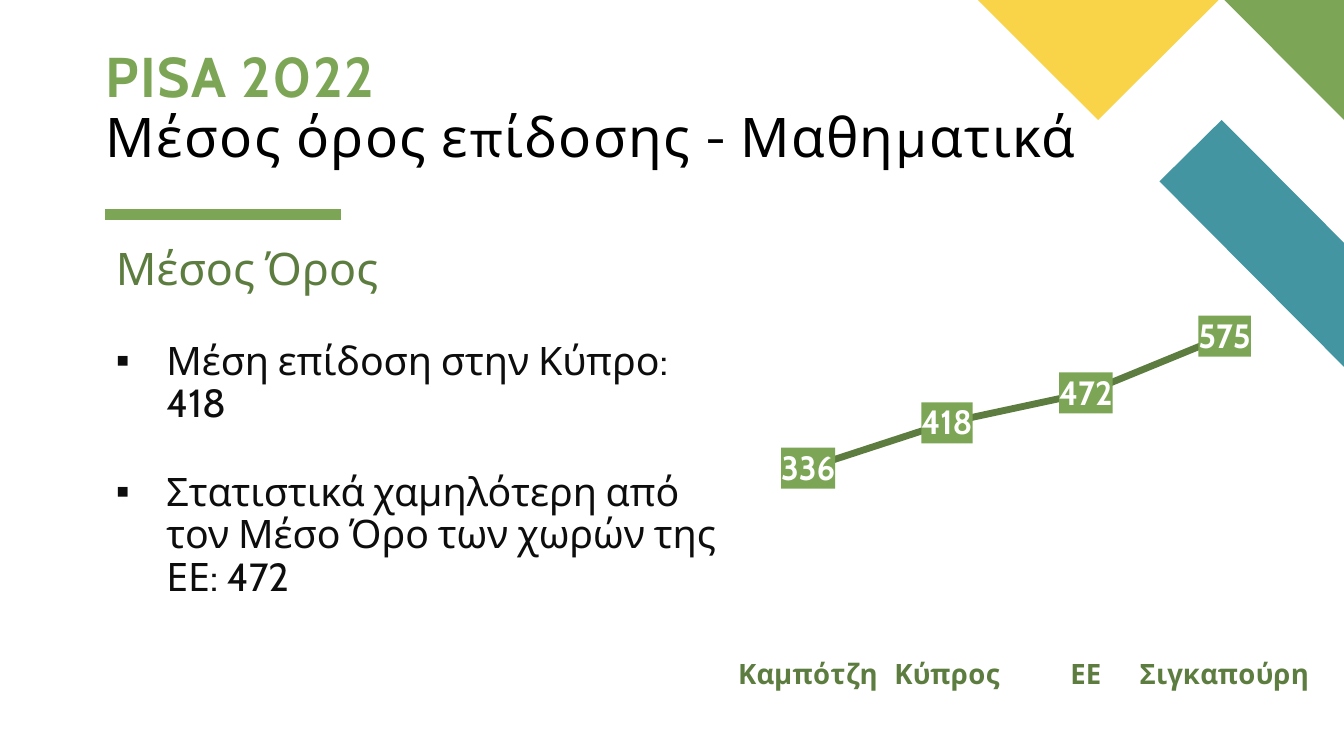
"""Build the slide on the average PISA 2022 performance in mathematics."""
from lxml.etree import SubElement
from pptx import Presentation
from pptx.chart.data import CategoryChartData
from pptx.dml.color import RGBColor
from pptx.enum.chart import XL_CHART_TYPE, XL_LABEL_POSITION, XL_MARKER_STYLE, XL_TICK_MARK
from pptx.enum.shapes import MSO_CONNECTOR
from pptx.enum.text import MSO_ANCHOR, MSO_AUTO_SIZE, PP_ALIGN
from pptx.oxml import parse_xml
from pptx.oxml.ns import nsdecls, qn
from pptx.util import Inches, Pt

COLORS = {"green": "7CA655", "dark green": "5D7D40", "teal": "4495A2",
          "yellow": "F9D448", "black": "000000", "ink": "0D0D0D", "white": "FFFFFF"}

deck = Presentation()
deck.slide_width, deck.slide_height = Inches(13.33), Inches(7.5)
slide = deck.slides.add_slide(deck.slide_layouts[1])


def share(*percents):
    """Turn alternating width and height percentages into lengths."""
    sides = (deck.slide_width, deck.slide_height)
    return [int(sides[i % 2] * percent / 100) for i, percent in enumerate(percents)]


def style(font, size, color, bold=False, name="Cabin"):
    """Set the typeface, size, weight and colour of a font."""
    font.name, font.size, font.bold = name, Pt(size), bold
    font.color.rgb = RGBColor.from_string(COLORS[color])


corner_shapes = [
    ("teal", [(100, 48.53), (100, 32.13), (90.9, 15.87), (86.27, 24)]),
    ("green", [(100, 15.87), (100, 0), (91.1, 0)]),
    ("yellow", [(72.75, 0), (81.7, 15.87), (90.67, 0)]),
]
for color, corners in corner_shapes:
    start, *others = [share(*corner) for corner in corners]
    outline = slide.shapes.build_freeform(*start)
    outline.add_line_segments(others, close=True)
    corner_shape = outline.convert_to_shape()
    corner_shape.shadow.inherit = False
    corner_shape.fill.solid()
    corner_shape.fill.fore_color.rgb = RGBColor.from_string(COLORS[color])
    corner_shape.line.fill.background()

title_rule = slide.shapes.add_connector(MSO_CONNECTOR.STRAIGHT, *share(7.8, 28.4, 25.35, 28.4))
title_rule.line.color.rgb = RGBColor.from_string(COLORS["green"])
title_rule.line.width = Pt(8)
SubElement(title_rule._element.spPr, qn("a:effectLst"))

title = slide.shapes.title
title.left, title.top, title.width, title.height = share(7.88, 5.2, 85.9, 23.73)
heading = title.text_frame
heading.auto_size = MSO_AUTO_SIZE.NONE
heading.vertical_anchor = MSO_ANCHOR.TOP
heading.margin_left = heading.margin_right = heading.margin_bottom = 0
heading.margin_top = Inches(0.1)
heading.text = "PISA 2022\nΜέσος όρος επίδοσης - Μαθηματικά"
heading_styles = [(40, "green", True, "Cabin"), (39, "black", False, "Karla")]
for paragraph, heading_style in zip(heading.paragraphs, heading_styles):
    paragraph.alignment = PP_ALIGN.LEFT
    paragraph.line_spacing = 0.9
    style(paragraph.font, *heading_style)
    paragraph.runs[0].font._element.set("spc", "100")

findings = slide.placeholders[1]
findings.left, findings.top, findings.width, findings.height = share(7.88, 32, 46.96, 50.67)
findings_text = findings.text_frame
findings_text.auto_size = MSO_AUTO_SIZE.NONE
findings_text.text = "\n".join([
    "Μέσος Όρος",
    "Μέση επίδοση στην Κύπρο: 418",
    "Στατιστικά χαμηλότερη από τον Μέσο Όρο των χωρών της ΕΕ: 472",
])
for position, paragraph in enumerate(findings_text.paragraphs):
    is_point = position > 0
    paragraph.line_spacing = 0.9
    paragraph.space_before = Pt(33 if is_point else 0)
    style(paragraph.font, *((28, "ink") if is_point else (32, "dark green")))
    properties = paragraph._p.get_or_add_pPr()
    indent = Inches(0.5) if is_point else 0
    properties.set("marL", str(indent))
    properties.set("indent", str(-indent))
    bullet = "<a:buChar %s char='▪'/>" if is_point else "<a:buNone %s/>"
    properties.find(qn("a:spcBef")).addnext(parse_xml(bullet % nsdecls("a")))

averages = CategoryChartData()
averages.categories = ["Καμπότζη", "Κύπρος", "ΕΕ", "Σιγκαπούρη"]
averages.add_series("Series 1", (336, 418, 472, 575))
chart = slide.shapes.add_chart(
    XL_CHART_TYPE.LINE_STACKED, *share(54.91, 35.33, 42.54, 59.47), averages).chart
chart.has_title = chart.has_legend = False
style(chart.font, 20, "white", True)

countries = chart.category_axis
countries.major_tick_mark = countries.minor_tick_mark = XL_TICK_MARK.NONE
countries.has_major_gridlines = False
countries.format.line.fill.background()
style(countries.tick_labels.font, 20, "dark green", True)
scores = chart.value_axis
scores.minimum_scale, scores.maximum_scale = 0, 700
scores.has_major_gridlines = False
scores.visible = False
for crossing in scores._element.findall(qn("c:crossBetween")):
    scores._element.remove(crossing)
scores._element.find(qn("c:crosses")).addnext(
    parse_xml("<c:crossBetween %s val='between'/>" % nsdecls("c")))

trend = chart.plots[0].series[0]
trend.smooth = False
trend.marker.style = XL_MARKER_STYLE.NONE
trend.format.line.color.rgb = RGBColor.from_string(COLORS["dark green"])
trend.format.line.width = Pt(5)
labels = trend.data_labels
labels.show_value = True
labels.position = XL_LABEL_POSITION.CENTER
style(labels.font, 24, "white", True)
labels._element.find(qn("c:txPr")).addprevious(parse_xml(
    "<c:spPr %s><a:solidFill><a:srgbClr val='%s'/></a:solidFill></c:spPr>"
    % (nsdecls("c", "a"), COLORS["green"])))

plot_area = chart._chartSpace.chart.plotArea
for automatic in plot_area.findall(qn("c:layout")):
    plot_area.remove(automatic)
layout = parse_xml("<c:layout %s><c:manualLayout/></c:layout>" % nsdecls("c"))
plot_layout = [("layoutTarget", "inner"), ("xMode", "edge"), ("yMode", "edge"),
               ("x", "0"), ("y", "0"), ("w", "0.99"), ("h", "0.86")]
for tag, value in plot_layout:
    SubElement(layout[0], qn("c:" + tag)).set("val", value)
plot_area.insert(0, layout)

deck.save("out.pptx")
